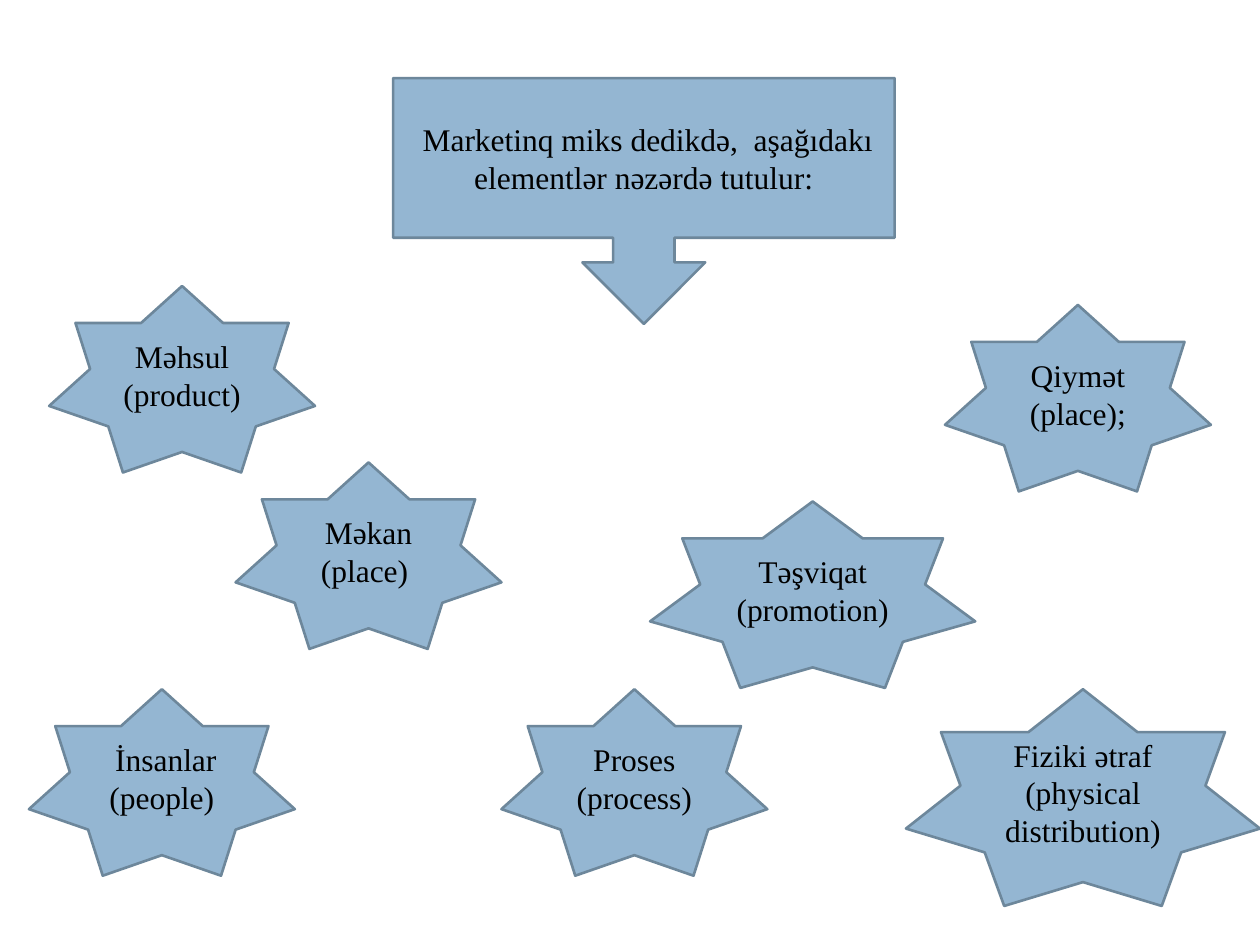
from pptx import Presentation
from pptx.dml.color import RGBColor
from pptx.enum.shapes import MSO_SHAPE
from pptx.enum.text import MSO_ANCHOR, PP_ALIGN
from pptx.util import Inches, Pt

CALLOUT = MSO_SHAPE.DOWN_ARROW_CALLOUT
STAR = MSO_SHAPE.STAR_7_POINT
MIDDLE = MSO_ANCHOR.MIDDLE
CENTER = PP_ALIGN.CENTER

FILL, OUTLINE, TEXT = "94B6D2", "6D879B", "000000"
FONT = {"name": "Times New Roman", "size": Pt(18)}
STAR_SIZE = (2.11, 1.48)

HEADING = (" Marketinq miks dedikdə,  aşağıdakı elementlər nəzərdə tutulur:", (3.12, 0.62), (3.98, 1.95))
ELEMENTS = [
    ("Məkan (place) ", (1.87, 3.67), STAR_SIZE),
    (" İnsanlar (people)", (0.23, 5.47), STAR_SIZE),
    ("Proses (process)", (3.98, 5.47), STAR_SIZE),
    ("Fiziki ətraf (physical distribution)", (7.19, 5.47), (2.81, 1.72)),
    ("Təşviqat (promotion)", (5.16, 3.98), (2.58, 1.48)),
    ("Məhsul (product)", (0.39, 2.27), STAR_SIZE),
    ("Qiymət (place);", (7.5, 2.42), STAR_SIZE),
]


def color(hex_value):
    """Return the colour for a hex string."""
    return RGBColor.from_string(hex_value)


def add_labelled_shape(slide, kind, text, position, size):
    """Add a filled, outlined shape with centred text."""
    shape = slide.shapes.add_shape(kind, *map(Inches, position + size))
    shape.shadow.inherit = False
    shape.fill.solid()
    shape.fill.fore_color.rgb = color(FILL)
    shape.line.color.rgb = color(OUTLINE)
    shape.line.width = Pt(1.5)
    frame = shape.text_frame
    frame.word_wrap = True
    frame.vertical_anchor = MIDDLE
    paragraph = frame.paragraphs[0]
    paragraph.alignment = CENTER
    run = paragraph.add_run()
    run.text = text
    for name, value in FONT.items():
        setattr(run.font, name, value)
    run.font.color.rgb = color(TEXT)


def main():
    """Build the marketing mix slide."""
    presentation = Presentation()
    presentation.slide_width, presentation.slide_height = Inches(10), Inches(7.5)
    slide = presentation.slides.add_slide(presentation.slide_layouts[6])
    add_labelled_shape(slide, CALLOUT, *HEADING)
    for element in ELEMENTS:
        add_labelled_shape(slide, STAR, *element)
    presentation.save("out.pptx")


if __name__ == "__main__":
    main()
